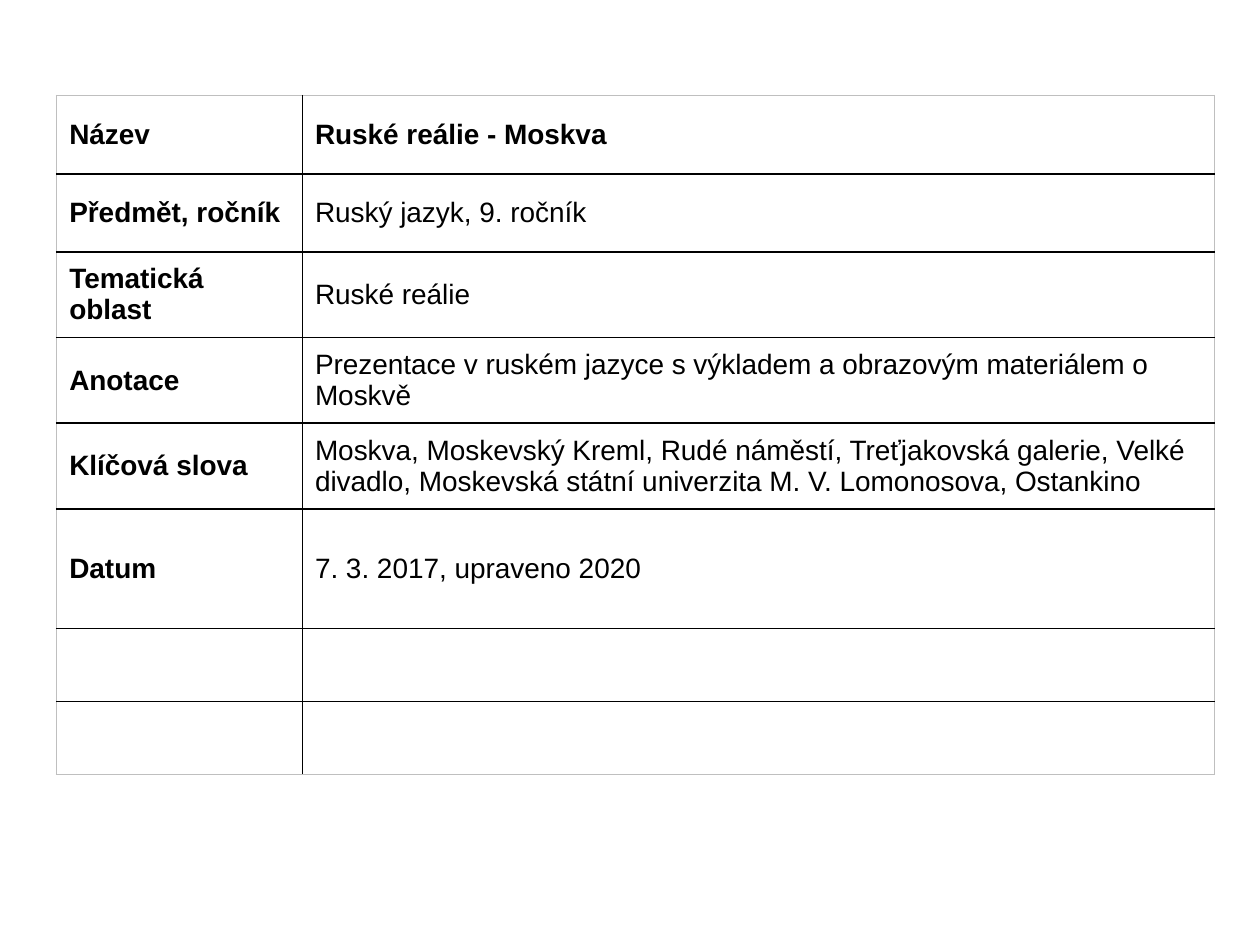
from lxml.etree import SubElement
from pptx import Presentation
from pptx.dml.color import RGBColor
from pptx.enum.text import MSO_ANCHOR
from pptx.oxml.ns import qn
from pptx.util import Inches, Pt

COLORS = {"text": "000000", "inner": "000000", "outer": "BFBFBF", "cell": "FFFFFF"}
COLUMN_WIDTHS = [1.95, 7.24]
ROWS = [
    (0.62, "Název", "Ruské reálie - Moskva"),
    (0.62, "Předmět, ročník", "Ruský jazyk, 9. ročník"),
    (0.68, "Tematická oblast", "Ruské reálie"),
    (0.68, "Anotace",
     "Prezentace v ruském jazyce s výkladem a obrazovým materiálem o Moskvě"),
    (0.68, "Klíčová slova",
     "Moskva, Moskevský Kreml, Rudé náměstí, Treťjakovská galerie, Velké divadlo, "
     "Moskevská státní univerzita M. V. Lomonosova, Ostankino"),
    (0.95, "Datum", "7. 3. 2017, upraveno 2020"),
    (0.58, "", ""),
    (0.58, "", ""),
]


def set_borders(cell, row, column):
    """Draw grey lines on the table's outer edge and black lines inside it."""
    outer_sides = {
        "lnL": column == 0,
        "lnR": column == len(COLUMN_WIDTHS) - 1,
        "lnT": row == 0,
        "lnB": row == len(ROWS) - 1,
    }
    properties = cell._tc.get_or_add_tcPr()
    for side, is_outer in outer_sides.items():
        line = SubElement(properties, qn(f"a:{side}"), w=str(Pt(1)))
        fill = SubElement(line, qn("a:solidFill"))
        SubElement(fill, qn("a:srgbClr"), val=COLORS["outer" if is_outer else "inner"])


def format_cell(cell, text, bold):
    cell.vertical_anchor = MSO_ANCHOR.MIDDLE
    cell.fill.solid()
    cell.fill.fore_color.rgb = RGBColor.from_string(COLORS["cell"])
    cell.text_frame.text = text
    for run in cell.text_frame.paragraphs[0].runs:
        run.font.name = "Arial"
        run.font.size = Pt(16)
        run.font.bold = bold
        run.font.color.rgb = RGBColor.from_string(COLORS["text"])


def add_details_table(slide):
    heights = [height for height, *_ in ROWS]
    table = slide.shapes.add_table(
        len(ROWS), len(COLUMN_WIDTHS), Inches(0.45), Inches(0.76),
        Inches(sum(COLUMN_WIDTHS)), Inches(sum(heights))).table
    table.first_row = False
    table.horz_banding = False
    for column, width in zip(table.columns, COLUMN_WIDTHS):
        column.width = Inches(width)
    for row, (height, *texts) in enumerate(ROWS):
        table.rows[row].height = Inches(height)
        for column, text in enumerate(texts):
            cell = table.cell(row, column)
            set_borders(cell, row, column)
            format_cell(cell, text, bold=row == 0 or column == 0)


def main():
    presentation = Presentation()
    presentation.slide_width = Inches(10)
    presentation.slide_height = Inches(7.5)
    slide = presentation.slides.add_slide(presentation.slide_layouts[6])
    add_details_table(slide)
    presentation.save("out.pptx")


if __name__ == "__main__":
    main()
